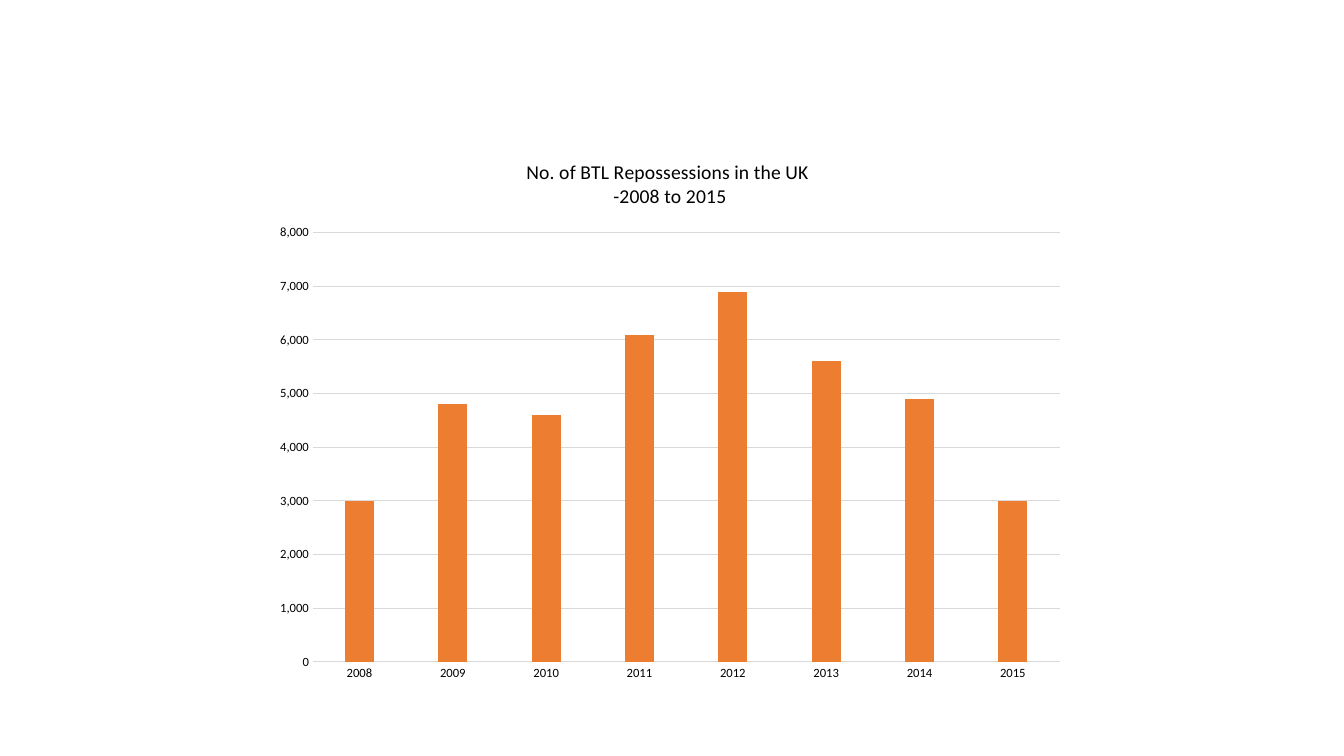
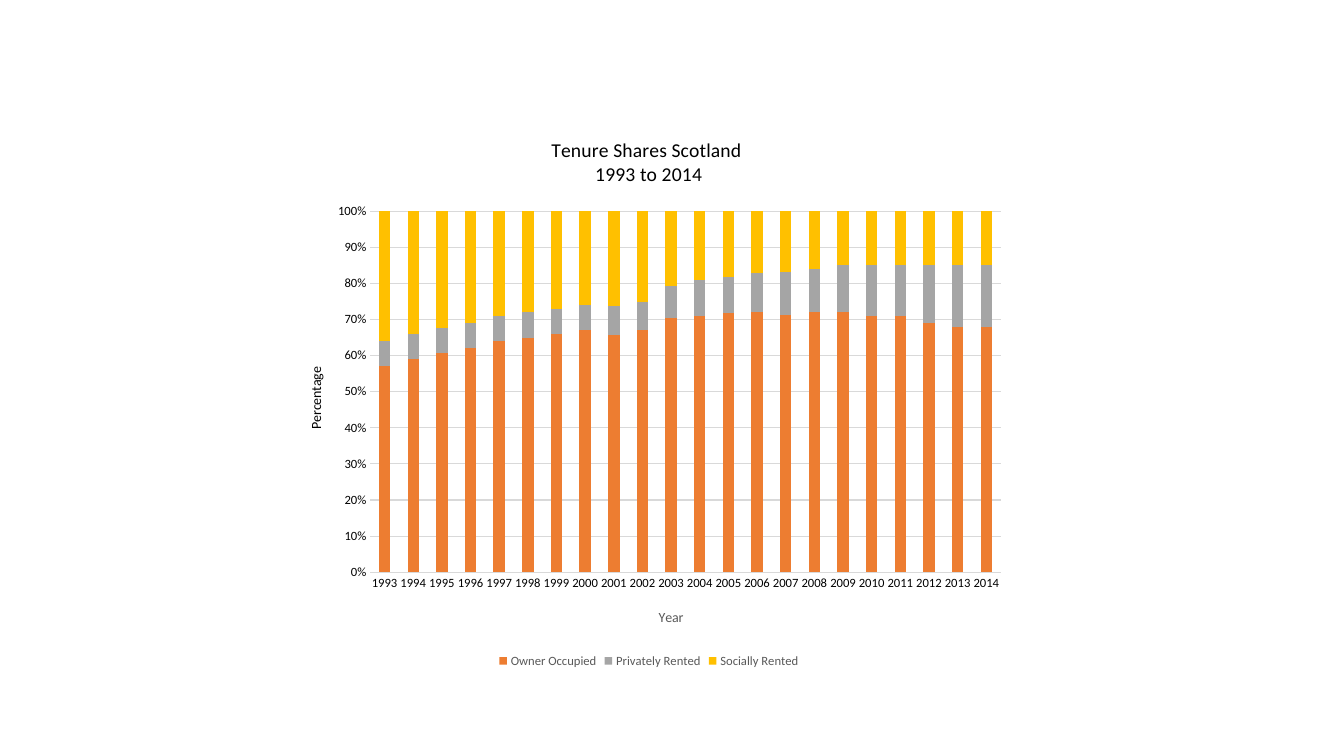
from lxml.etree import SubElement
from pptx import Presentation
from pptx.chart.data import CategoryChartData
from pptx.dml.color import RGBColor
from pptx.enum.chart import XL_CHART_TYPE, XL_LEGEND_POSITION, XL_TICK_MARK
from pptx.oxml import parse_xml
from pptx.oxml.ns import nsdecls, qn
from pptx.util import Inches, Pt

COLORS = {"text": "000000", "muted": "595959", "grid": "D9D9D9",
          "orange": "ED7D31", "grey": "A5A5A5", "gold": "FFC000"}
FONT = "Calibri"

REPOSSESSIONS = {
    "box": (2.62, 1.38, 8.05, 5.46),
    "kind": XL_CHART_TYPE.COLUMN_CLUSTERED,
    "title": ["No. of BTL Repossessions in the UK ", "-2008 to 2015"],
    "years": range(2008, 2016),
    "series": [("Series 1", "orange", [3000, 4800, 4600, 6100, 6900, 5600, 4900, 3000])],
    "scale": {"minimum_scale": 0, "maximum_scale": 8000, "major_unit": 1000},
    "number_format": "#,##0",
    "bars": {"gap_width": 219, "overlap": -27},
    "plot_area": (0.06, 0.17, 0.92, 0.78),
}
TENURE = {
    "box": (2.8, 1.16, 7.27, 5.51),
    "kind": XL_CHART_TYPE.COLUMN_STACKED_100,
    "title": ["Tenure Shares Scotland ", "1993 to 2014"],
    "years": range(1993, 2015),
    "series": [
        ("Owner Occupied", "orange", [57, 59, 60, 62, 64, 65, 66, 67, 65, 67, 71,
                                      71, 71, 72, 72, 72, 72, 71, 71, 69, 68, 68]),
        ("Privately Rented", "grey", [7, 7, 7, 7, 7, 7, 7, 7, 8, 8, 9,
                                      10, 10, 11, 12, 12, 13, 14, 14, 16, 17, 17]),
        ("Socially Rented", "gold", [36, 34, 32, 31, 29, 28, 27, 26, 26, 25, 21,
                                     19, 18, 17, 17, 16, 15, 15, 15, 15, 15, 15]),
    ],
    "scale": {"minimum_scale": 0, "maximum_scale": 1, "major_unit": 0.1},
    "number_format": "0%",
    "bars": {"gap_width": 150, "overlap": 100},
    "plot_area": (0.12, 0.17, 0.86, 0.65),
}


def rgb(name):
    return RGBColor.from_string(COLORS[name])


def format_font(font, size, color="text"):
    for attribute, value in {"name": FONT, "size": Pt(size), "bold": False}.items():
        setattr(font, attribute, value)
    font.color.rgb = rgb(color)


def set_layout(element, *fractions, inner=False):
    """Place a chart part by fractions of the chart: x, y and, if given, w, h."""
    for old in element.findall(qn("c:layout")):
        element.remove(old)
    layout = parse_xml(f"<c:layout {nsdecls('c')}><c:manualLayout/></c:layout>")
    manual = layout[0]
    settings = [("layoutTarget", "inner")] if inner else []
    settings += [("xMode", "edge"), ("yMode", "edge")]
    settings += zip("xywh", fractions)
    for tag, value in settings:
        SubElement(manual, qn(f"c:{tag}")).set("val", str(value))
    text = element.find(qn("c:tx"))
    element.insert(0 if text is None else element.index(text) + 1, layout)


def write_title(title, lines, size, color="text"):
    frame = title.text_frame
    for index, line in enumerate(lines):
        paragraph = frame.add_paragraph() if index else frame.paragraphs[0]
        run = paragraph.add_run()
        run.text = line
        format_font(run.font, size, color)


def style_axes(chart, content):
    years, values = chart.category_axis, chart.value_axis
    for axis in (years, values):
        axis.major_tick_mark = axis.minor_tick_mark = XL_TICK_MARK.NONE
        format_font(axis.tick_labels.font, 9)
    values.has_major_gridlines = True
    for line in (years.format.line, values.major_gridlines.format.line):
        line.color.rgb = rgb("grid")
        line.width = Pt(0.75)
    values.format.line.fill.background()
    for attribute, value in content["scale"].items():
        setattr(values, attribute, value)
    values.tick_labels.number_format = content["number_format"]
    values.tick_labels.number_format_is_linked = False


def add_column_chart(slide, content):
    data = CategoryChartData()
    data.categories = [str(year) for year in content["years"]]
    for name, _, values in content["series"]:
        data.add_series(name, values)
    box = [Inches(length) for length in content["box"]]
    chart = slide.shapes.add_chart(content["kind"], *box, data).chart
    format_font(chart.font, 10)
    chart.has_legend = False
    chart.has_title = True
    write_title(chart.chart_title, content["title"], 14)
    chart.chart_title.include_in_layout = False

    plot = chart.plots[0]
    plot.vary_by_categories = False
    for attribute, value in content["bars"].items():
        setattr(plot, attribute, value)
    for series, (_, color, _) in zip(plot.series, content["series"]):
        series.format.fill.solid()
        series.format.fill.fore_color.rgb = rgb(color)
    style_axes(chart, content)
    set_layout(chart._chartSpace.chart.plotArea, *content["plot_area"], inner=True)
    return chart


def add_axis_title(axis, text, color, x, y, rotation=0):
    axis.has_title = True
    title = axis.axis_title
    write_title(title, [text], 10, color)
    body = title._element.find(".//" + qn("a:bodyPr"))
    body.set("rot", str(rotation * 60000))
    body.set("vert", "horz")
    set_layout(title._element, x, y)


def add_legend(chart):
    chart.has_legend = True
    chart.legend.position = XL_LEGEND_POSITION.BOTTOM
    chart.legend.include_in_layout = False
    format_font(chart.legend.font, 9, "muted")


def build_repossessions(slide):
    add_column_chart(slide, REPOSSESSIONS)


def build_tenure(slide):
    chart = add_column_chart(slide, TENURE)
    add_axis_title(chart.category_axis, "Year", "muted", 0.51, 0.88)
    add_axis_title(chart.value_axis, "Percentage ", "text", 0.03, 0.44, rotation=-90)
    add_legend(chart)


def main():
    deck = Presentation()
    deck.slide_width, deck.slide_height = Inches(13.33), Inches(7.5)
    blank = deck.slide_layouts[6]
    for build in (build_repossessions, build_tenure):
        build(deck.slides.add_slide(blank))
    deck.save("out.pptx")


if __name__ == "__main__":
    main()
